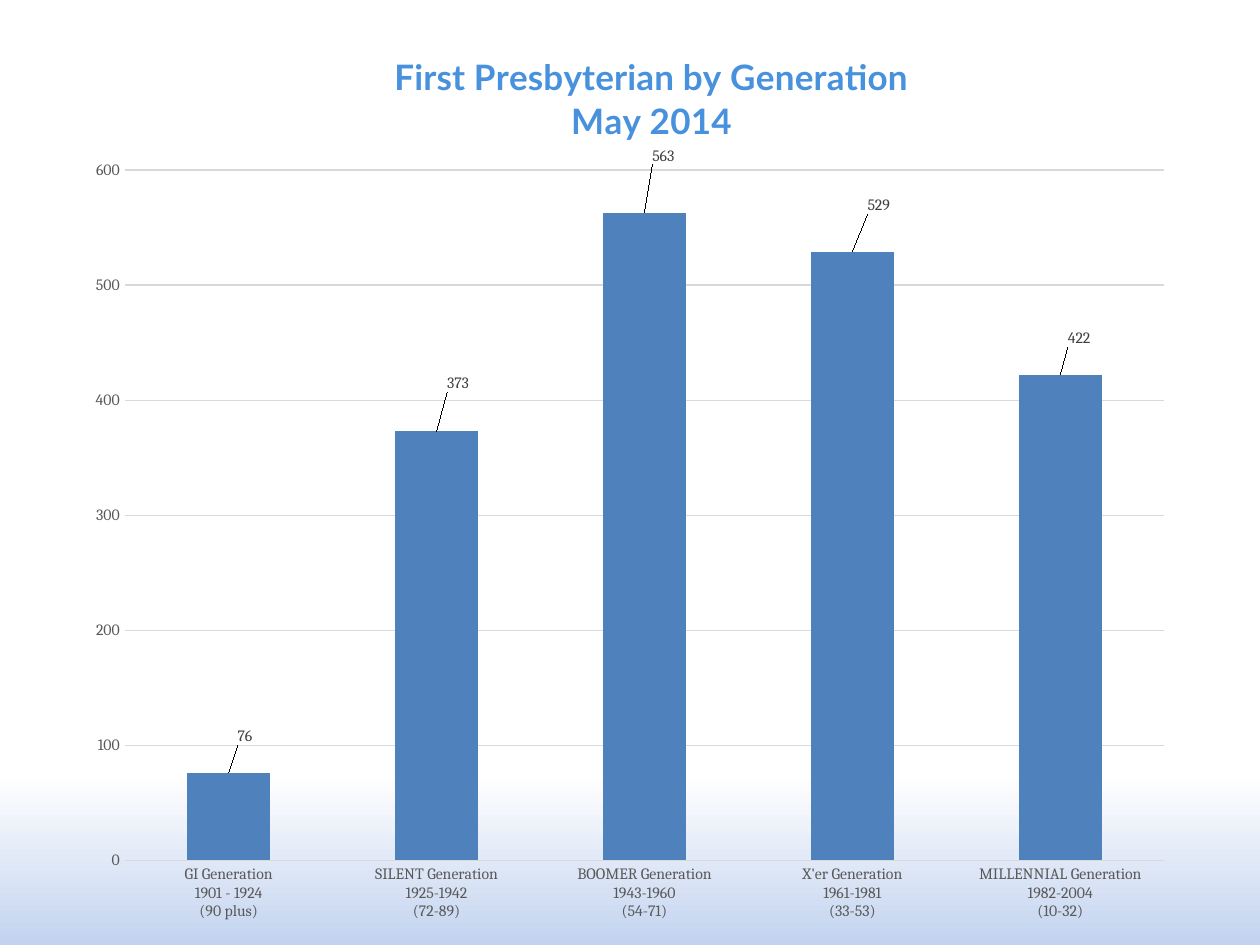
"""Build the slide with the column chart of members by generation."""
from dataclasses import dataclass
from typing import Any

from lxml import etree
from pptx import Presentation
from pptx.chart.data import CategoryChartData
from pptx.dml.color import RGBColor
from pptx.enum import chart as kinds
from pptx.oxml.ns import qn
from pptx.util import Inches, Pt


@dataclass(frozen=True)
class Theme:
    title: str = "4891DC"
    axis: str = "595959"
    label: str = "404040"
    grid: str = "D9D9D9"
    column: str = "4F81BD"
    glow: str = "C3D3EF"
    page: str = "FFFFFF"
    title_font: str = "Lato"
    body_font: str = "Cambria"
    title_size: int = 20
    body_size: int = 9


@dataclass(frozen=True)
class Generation:
    name: str
    years: str
    ages: str
    members: int
    shift: tuple[float, float]

    @property
    def category(self) -> str:
        return f"{self.name} Generation\n{self.years}\n({self.ages})"


THEME = Theme()
CHART_WIDTH, CHART_HEIGHT = 8.83, 7.32
TITLE_LINES = ("First Presbyterian by Generation", "May 2014")
GENERATIONS = (
    Generation("GI", "1901 - 1924", "90 plus", 76, (0.13, -0.18)),
    Generation("SILENT", "1925-1942", "72-89", 373, (0.17, -0.27)),
    Generation("BOOMER", "1943-1960", "54-71", 563, (0.15, -0.34)),
    Generation("X'er", "1961-1981", "33-53", 529, (0.21, -0.26)),
    Generation("MILLENNIAL", "1982-2004", "10-32", 422, (0.15, -0.18)),
)


def set_all(target: Any, values: dict[str, Any]) -> None:
    for name, value in values.items():
        setattr(target, name, value)


def style_font(font: Any, color: str, name: str = THEME.body_font,
               size: int = THEME.body_size, bold: bool = False) -> None:
    set_all(font, {"name": name, "size": Pt(size), "bold": bold})
    font.color.rgb = RGBColor.from_string(color)


def place(element: Any, index: int, x: float, y: float,
          size: tuple[float, float] | None = None, inner: bool = False) -> None:
    """Give a chart part a manual layout, from lengths in inches."""
    for old in element.findall(qn("c:layout")):
        element.remove(old)
    layout = etree.Element(qn("c:layout"))
    manual = etree.SubElement(layout, qn("c:manualLayout"))
    settings: dict[str, Any] = {}
    if inner:
        settings["layoutTarget"] = "inner"
    if index == 0 or element.tag == qn("c:title"):
        settings.update(xMode="edge", yMode="edge")
    settings.update(x=x / CHART_WIDTH, y=y / CHART_HEIGHT)
    if size:
        settings.update(w=size[0] / CHART_WIDTH, h=size[1] / CHART_HEIGHT)
    for name, value in settings.items():
        text = value if isinstance(value, str) else f"{value:.4f}"
        etree.SubElement(manual, qn(f"c:{name}")).set("val", text)
    element.insert(index, layout)


def paint_background(page: Any) -> None:
    fill = page.background.fill
    fill.gradient()
    fill.gradient_angle = 90
    for stop, color, position in zip(fill.gradient_stops,
                                     (THEME.glow, THEME.page), (0, 0.18)):
        stop.color.rgb = RGBColor.from_string(color)
        stop.position = position


def add_title(chart: Any) -> None:
    chart.has_title = True
    frame = chart.chart_title.text_frame
    for number, line in enumerate(TITLE_LINES):
        para = frame.add_paragraph() if number else frame.paragraphs[0]
        span = para.add_run()
        span.text = line
        for font in (para.font, span.font):
            style_font(font, THEME.title, THEME.title_font, THEME.title_size, True)
    place(chart.chart_title._element, 1, 2.52, 0.25)


def style_axes(chart: Any) -> None:
    for axis in (chart.category_axis, chart.value_axis):
        set_all(axis, {"major_tick_mark": kinds.XL_TICK_MARK.NONE,
                       "minor_tick_mark": kinds.XL_TICK_MARK.NONE})
        style_font(axis.tick_labels.font, THEME.axis)
        axis.format.line.fill.background()
    set_all(chart.value_axis, {"minimum_scale": 0, "maximum_scale": 600,
                               "major_unit": 100, "has_major_gridlines": True})
    line = chart.value_axis.major_gridlines.format.line
    line.width = Pt(0.75)
    line.color.rgb = RGBColor.from_string(THEME.grid)


def style_columns(chart: Any) -> None:
    plot = chart.plots[0]
    set_all(plot, {"gap_width": 150, "vary_by_categories": False})
    series = plot.series[0]
    series.format.fill.solid()
    series.format.fill.fore_color.rgb = RGBColor.from_string(THEME.column)
    series.data_labels.show_value = True
    style_font(series.data_labels.font, THEME.label)
    for index, generation in enumerate(GENERATIONS):
        label = series.points[index].data_label
        style_font(label.font, THEME.label)
        label.position = kinds.XL_LABEL_POSITION.OUTSIDE_END
        place(label._get_or_add_dLbl(), 1, *generation.shift)


def add_generation_chart(page: Any) -> None:
    data = CategoryChartData()
    data.categories = [generation.category for generation in GENERATIONS]
    data.add_series("Series 1", [generation.members for generation in GENERATIONS])
    chart = page.shapes.add_chart(
        kinds.XL_CHART_TYPE.COLUMN_CLUSTERED, Inches(0.58), Inches(0.14),
        Inches(CHART_WIDTH), Inches(CHART_HEIGHT), data).chart
    chart.has_legend = False
    style_font(chart.font, "000000", "Calibri", 10)
    add_title(chart)
    style_axes(chart)
    style_columns(chart)
    place(chart._chartSpace.chart.plotArea, 0, 0.41, 1.21, (8.25, 5.48), inner=True)


def main() -> None:
    deck = Presentation()
    set_all(deck, {"slide_width": Inches(10), "slide_height": Inches(7.5)})
    page = deck.slides.add_slide(deck.slide_layouts[6])
    paint_background(page)
    add_generation_chart(page)
    deck.save("out.pptx")


if __name__ == "__main__":
    main()
